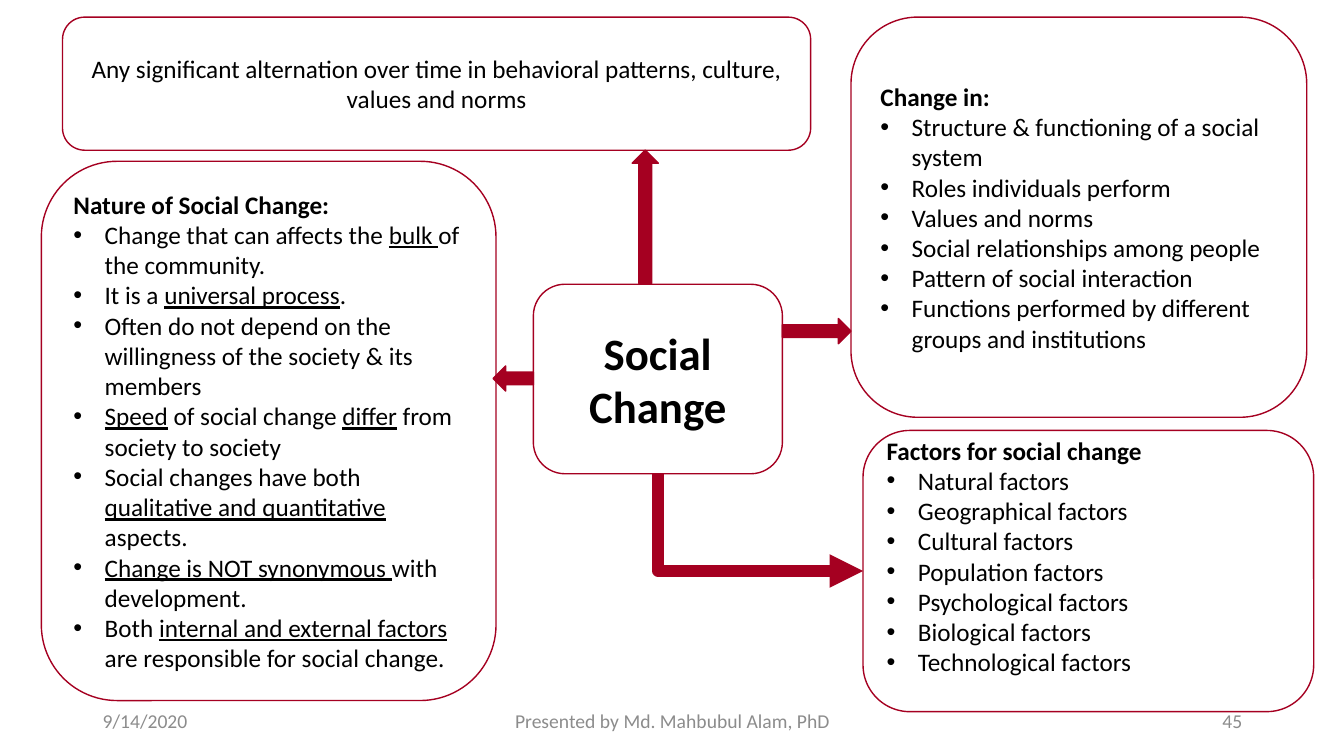
import pptx
import pptx.util
import pptx.oxml
import pptx.oxml.ns
from pptx.dml.color import RGBColor
from pptx.enum.shapes import MSO_CONNECTOR, MSO_SHAPE
from pptx.enum.text import MSO_ANCHOR, PP_ALIGN
from pptx.util import Inches

RED = RGBColor(0xA5, 0x00, 0x21)
BLACK = RGBColor(0x00, 0x00, 0x00)
GRAY = RGBColor(0x8C, 0x8C, 0x8C)
FONT = "Calibri"

CHANGES = [
    "Structure & functioning of a social system",
    "Roles individuals perform",
    "Values and norms",
    "Social relationships among people",
    "Pattern of social interaction",
    "Functions performed by different groups and institutions",
]
FACTORS = [f"{kind} factors" for kind in (
    "Natural", "Geographical", "Cultural", "Population",
    "Psychological", "Biological", "Technological")]
# Words between bars are underlined
NATURE = [
    "Change that can affects the |bulk |of the community.",
    "It is a |universal process|.",
    "Often do not depend on the willingness of the society & its members",
    "|Speed| of social change |differ| from society to society",
    "Social changes have both |qualitative and quantitative |aspects.",
    "|Change is NOT synonymous |with development.",
    "Both |internal and external factors |are responsible for social change.",
]


class Board:
    def __init__(self, slide):
        self.slide = slide
        self.shapes = slide.shapes

    def style(self, run, size, color=BLACK, bold=False):
        font = run.font
        font.name, font.size, font.bold = FONT, pptx.util.Pt(size), bold
        font.color.rgb = color

    def fill_text(self, para, text, size, align, color=BLACK, bold=False):
        para.text = text
        para.alignment = align
        self.style(para.runs[0], size, color, bold)

    def label(self, left, width, text, align):
        area = self.shapes.add_textbox(
            Inches(left), Inches(6.95), Inches(width), Inches(0.4))
        frame = area.text_frame
        frame.word_wrap = True
        frame.vertical_anchor = MSO_ANCHOR.MIDDLE
        self.fill_text(frame.paragraphs[0], text, 14, align, GRAY)

    def shape(self, kind, place):
        item = self.shapes.add_shape(kind, *map(Inches, place))
        item.shadow.inherit = False
        item.line.color.rgb = RED
        item.line.width = pptx.util.Pt(1)
        return item

    def box(self, place, text, size=18, bold=False, align=PP_ALIGN.CENTER):
        item = self.shape(MSO_SHAPE.ROUNDED_RECTANGLE, place)
        item.fill.background()
        frame = item.text_frame
        frame.word_wrap = True
        frame.vertical_anchor = MSO_ANCHOR.MIDDLE
        self.fill_text(frame.paragraphs[0], text, size, align, bold=bold)
        return item

    def panel(self, place, head, lines):
        item = self.box(place, head, bold=True, align=PP_ALIGN.LEFT)
        for line in lines:
            self.bullet(item.text_frame.add_paragraph(), line)
        return item

    def bullet(self, para, line):
        para.alignment = PP_ALIGN.LEFT
        for spot, part in enumerate(line.split("|")):
            if part:
                run = para.add_run()
                run.text = part
                self.style(run, 18)
                run.font.underline = spot % 2 == 1
        props = para._p.get_or_add_pPr()
        props.set("marL", str(Inches(0.31)))
        props.set("indent", str(-Inches(0.31)))
        for tag, key, value in (("a:buFont", "typeface", "Arial"),
                                ("a:buChar", "char", "•")):
            mark = pptx.oxml.ns.qn(tag)
            props.append(props.makeelement(mark, {key: value}))

    def arrow(self, kind, place):
        item = self.shape(kind, place)
        item.fill.solid()
        item.fill.fore_color.rgb = RED

    def elbow(self, start, end):
        x, y = start.left + start.width // 2, start.top + start.height
        tip, level = end.left, end.top + end.height // 2
        link = self.shapes.add_connector(MSO_CONNECTOR.ELBOW, x, y, tip, level)
        link.begin_connect(start, 2)
        link.end_connect(end, 1)
        link.line.color.rgb = RED
        link.line.width = pptx.util.Pt(8)
        # Single bend: a frame turned by 270 degrees and flipped
        wide, high = tip - x, level - y
        link.left, link.top = x + (wide - high) // 2, y + (high - wide) // 2
        link.width, link.height = high, wide
        props = link._element.spPr
        frame = props.find(pptx.oxml.ns.qn("a:xfrm"))
        frame.set("rot", "16200000")
        frame.set("flipH", "1")
        props.find(pptx.oxml.ns.qn("a:prstGeom")).set("prst", "bentConnector2")
        line = props.find(pptx.oxml.ns.qn("a:ln"))
        head = pptx.oxml.ns.qn("a:tailEnd")
        line.append(line.makeelement(head, {"type": "triangle"}))
        blank = pptx.oxml.ns.qn("a:effectLst")
        props.append(props.makeelement(blank, {}))


def main():
    deck = pptx.Presentation()
    deck.slide_width, deck.slide_height = Inches(13.33), Inches(7.5)
    board = Board(deck.slides.add_slide(deck.slide_layouts[6]))

    # Footer
    board.label(0.92, 3, "9/14/2020", PP_ALIGN.LEFT)
    board.label(4.42, 4.5, "Presented by Md. Mahbubul Alam, PhD",
                PP_ALIGN.CENTER)
    board.label(9.42, 3, "45", PP_ALIGN.RIGHT)

    # Topic and definition
    topic = board.box((5.29, 2.82, 2.47, 1.88), "Social Change", 32, True)
    board.box((0.62, 0.17, 7.42, 1.32),
              "Any significant alternation over time in behavioral patterns, "
              "culture, values and norms")

    # Bulleted panels
    board.panel((8.44, 0.17, 4.52, 3.97), "Change in:", CHANGES)
    causes = board.panel((8.56, 4.27, 4.47, 2.79),
                         "Factors for social change", FACTORS)
    causes.text_frame.margin_bottom = Inches(0.35)
    board.panel((0.41, 1.6, 4.51, 5.35), "Nature of Social Change:", NATURE)

    # Arrows from the topic
    board.arrow(MSO_SHAPE.UP_ARROW, (6.27, 1.49, 0.26, 1.32))
    board.arrow(MSO_SHAPE.LEFT_ARROW, (4.89, 3.63, 0.4, 0.25))
    board.arrow(MSO_SHAPE.RIGHT_ARROW, (7.76, 3.16, 0.68, 0.25))
    board.elbow(topic, causes)

    deck.save("out.pptx")


if __name__ == "__main__":
    main()
